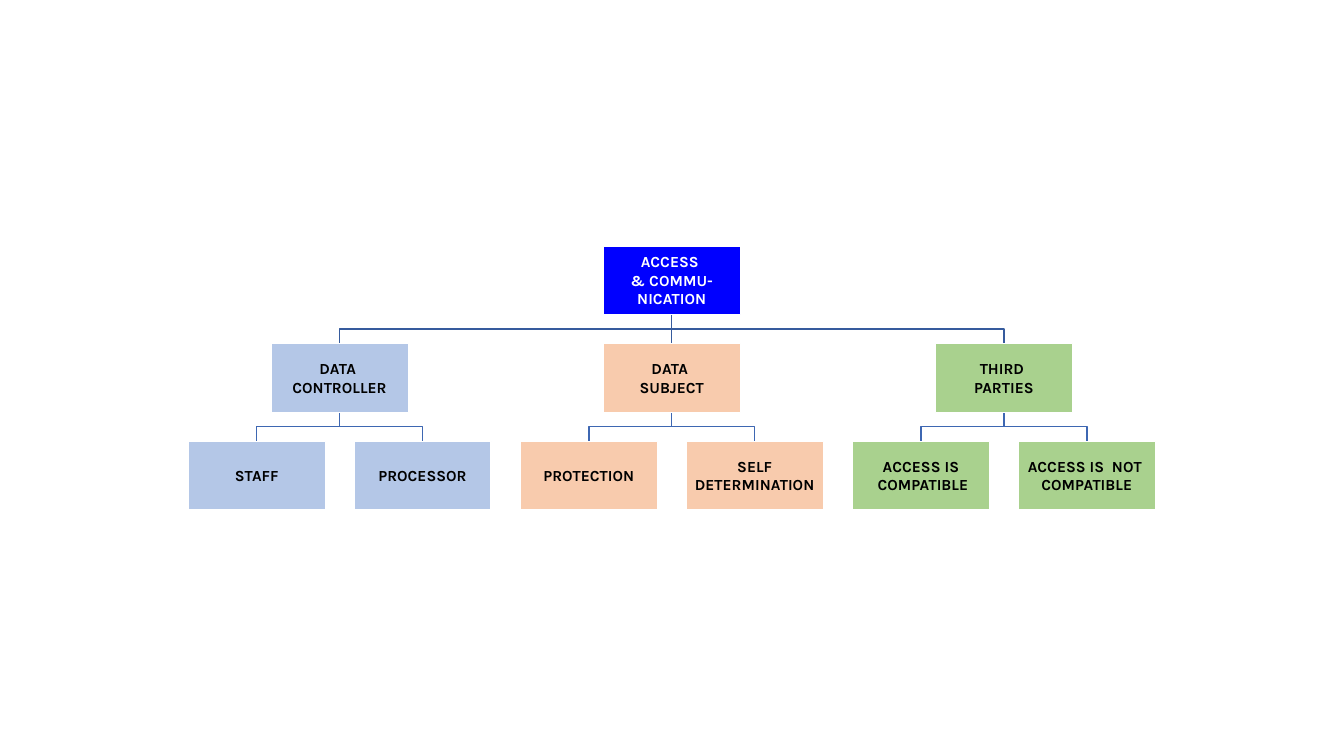
from lxml import etree
from pptx import Presentation
from pptx.dml.color import RGBColor
from pptx.enum.shapes import MSO_CONNECTOR, MSO_SHAPE
from pptx.enum.text import MSO_ANCHOR, PP_ALIGN
from pptx.oxml.ns import qn
from pptx.util import Cm, Pt

COLORS = {
    "root": "0000FF", "controller": "B4C7E7", "subject": "F8CBAD",
    "third": "A9D18E", "white": "FFFFFF", "black": "000000",
    "upper_line": "365B9D", "lower_line": "3E67B2",
}
BOX_W, BOX_H = 3.46, 1.73
ROOT_X, ROOT_Y = 16.93, 6.2
ROW_STEP, BRANCH_STEP, LEAF_OFFSET = 2.46, 8.37, 2.09
GAP = ROW_STEP - BOX_H

BRANCHES = [
    ("controller", "DATA \nCONTROLLER", ["STAFF", "PROCESSOR"]),
    ("subject", "DATA \nSUBJECT", ["PROTECTION", "SELF\nDETERMINATION"]),
    ("third", "THIRD \nPARTIES",
     ["ACCESS IS\n COMPATIBLE", "ACCESS IS  NOT \nCOMPATIBLE"]),
]

prs = Presentation()
prs.slide_width, prs.slide_height = Cm(33.87), Cm(19.05)
s = prs.slides.add_slide(prs.slide_layouts[6])


def add_box(x, y, text, fill, color="black"):
    """Add a box with its top centre at x, y."""
    sp = s.shapes.add_shape(MSO_SHAPE.RECTANGLE, Cm(x - BOX_W / 2), Cm(y),
                            Cm(BOX_W), Cm(BOX_H))
    sp.shadow.inherit = False
    sp.fill.solid()
    sp.fill.fore_color.rgb = RGBColor.from_string(COLORS[fill])
    sp.line.color.rgb = RGBColor.from_string(COLORS["white"])
    sp.line.width = Pt(1)
    tf = sp.text_frame
    tf.word_wrap = True
    tf.vertical_anchor = MSO_ANCHOR.MIDDLE
    tf.margin_left = tf.margin_right = tf.margin_top = tf.margin_bottom = Cm(0.02)
    tf.text = text
    for p in tf.paragraphs:
        p.alignment = PP_ALIGN.CENTER
        p.font.name, p.font.size, p.font.bold = "Karla", Pt(11), True
        p.font.color.rgb = RGBColor.from_string(COLORS[color])
    return sp


def add_elbow(x, y, child_x, color):
    """Add a bent line from a parent's bottom at x, y to a child's top."""
    mid = Cm(y + GAP / 2)
    fb = s.shapes.build_freeform(Cm(x), Cm(y))
    fb.add_line_segments([(Cm(x), mid), (Cm(child_x), mid),
                          (Cm(child_x), Cm(y + GAP))], close=False)
    sp = fb.convert_to_shape()
    sp.shadow.inherit = False
    sp.fill.background()
    sp.line.color.rgb = RGBColor.from_string(COLORS[color])
    sp.line.width = Pt(1)


# Lines, behind the boxes
branch_xs = [ROOT_X + i * BRANCH_STEP for i in (-1, 0, 1)]
branch_y, leaf_y = ROOT_Y + ROW_STEP, ROOT_Y + 2 * ROW_STEP
for x in branch_xs:
    for side in (-1, 1):
        add_elbow(x, branch_y + BOX_H, x + side * LEAF_OFFSET, "lower_line")
for x in (branch_xs[0], branch_xs[2]):
    add_elbow(ROOT_X, ROOT_Y + BOX_H, x, "upper_line")
stem = s.shapes.add_connector(MSO_CONNECTOR.STRAIGHT, Cm(ROOT_X),
                              Cm(ROOT_Y + BOX_H), Cm(ROOT_X), Cm(branch_y))
stem.line.color.rgb = RGBColor.from_string(COLORS["upper_line"])
stem.line.width = Pt(1)
etree.SubElement(stem._element.spPr, qn("a:effectLst"))

# Boxes: root, branches and leaves
root = add_box(ROOT_X, ROOT_Y, "ACCESS \n& COMMU-\nNICATION", "root", "white")
stem.begin_connect(root, 2)
for x, (fill, title, leaves) in zip(branch_xs, BRANCHES):
    branch = add_box(x, branch_y, title, fill)
    if x == ROOT_X:
        stem.end_connect(branch, 0)
    for side, leaf in zip((-1, 1), leaves):
        add_box(x + side * LEAF_OFFSET, leaf_y, leaf, fill)

prs.save("out.pptx")
